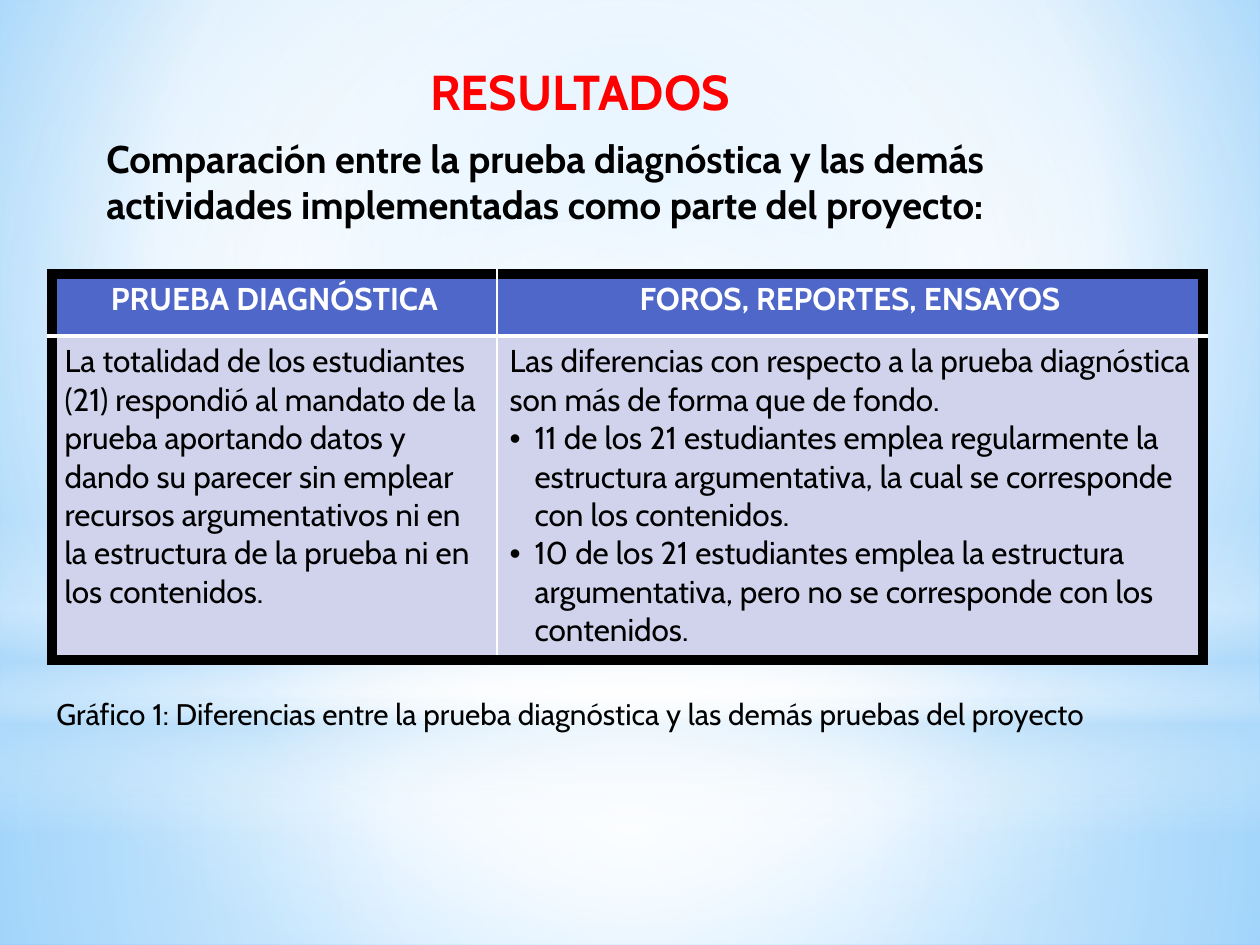
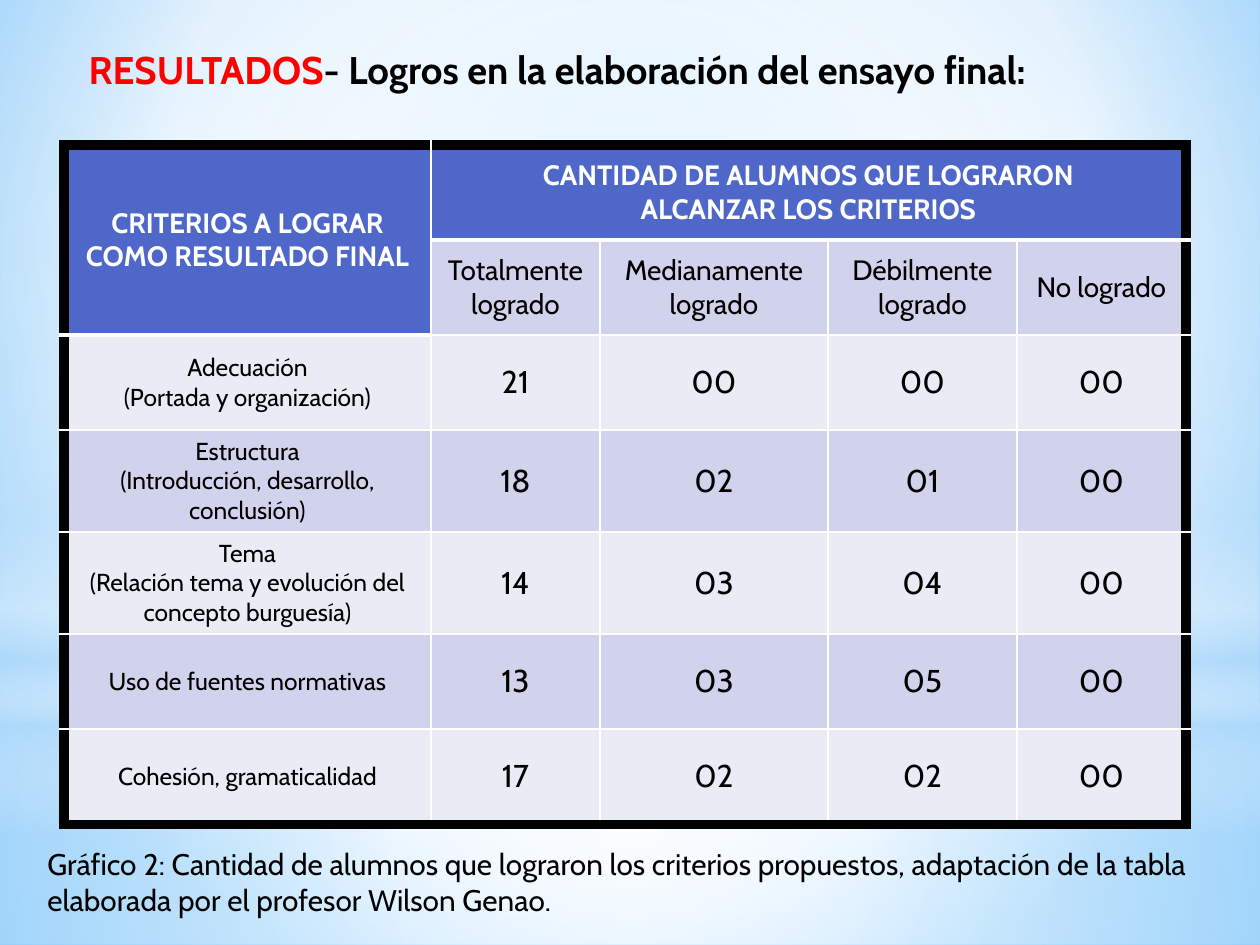
from dataclasses import dataclass

from pptx import Presentation
from pptx import util as u
from pptx.dml.color import RGBColor
from pptx.enum import shapes, text
from pptx.oxml import parse_xml
from pptx.oxml.ns import nsdecls, qn

FONT = "Cabin"
BLACK, WHITE, RED = "000000", "FFFFFF", "FF0000"
HEADER, BAND_DARK, BAND_LIGHT = "4E67C8", "D0D3EB", "E9EBF5"
SKY = "B4DCFA"
LEFT, CENTER = text.PP_ALIGN.LEFT, text.PP_ALIGN.CENTER
TOP, MIDDLE = text.MSO_ANCHOR.TOP, text.MSO_ANCHOR.MIDDLE
CENTRE_FOCUS = (50, 50, 50, 50)


@dataclass(frozen=True)
class Style:
    size: int
    colour: str = BLACK
    bold: bool = False


HEADING = Style(28, RED, True)
SUBHEADING = Style(22, BLACK, True)
SUBHEADING_RED = Style(22, RED, True)
CAPTION = Style(17)


def px(length):
    return u.Emu(round(length * 914400 / 126))


def rgb(colour):
    return RGBColor.from_string(colour)


def write(frame, paragraphs, align=LEFT):
    """Fill a text frame; each paragraph is a list of (words, style)."""
    for index, spans in enumerate(paragraphs):
        para = frame.paragraphs[0] if index == 0 else frame.add_paragraph()
        para.alignment = align
        for words, style in spans:
            span = para.add_run()
            span.text = words
            span.font.name = FONT
            span.font.size = u.Pt(style.size)
            span.font.bold = style.bold
            span.font.color.rgb = rgb(style.colour)


def place(shape, box):
    shape.left, shape.top, shape.width, shape.height = map(px, box)


def add_title(page, box, spans, align=LEFT):
    title = page.shapes.title
    place(title, box)
    frame = title.text_frame
    frame.word_wrap = True
    frame.auto_size = text.MSO_AUTO_SIZE.NONE
    frame.vertical_anchor = TOP
    write(frame, [spans], align)


def add_text(page, box, words, style):
    frame = page.shapes.add_textbox(*map(px, box)).text_frame
    frame.word_wrap = True
    write(frame, [[(words, style)]])


def gradient(stops, focus=None):
    """Gradient of (position, colour, opacity): circular with a focus, else downward."""
    marks = "".join(
        f'<a:gs pos="{position * 1000}"><a:srgbClr val="{colour}">'
        f'<a:alpha val="{opacity * 1000}"/></a:srgbClr></a:gs>'
        for position, colour, opacity in stops)
    if focus:
        sides = " ".join(f'{side}="{share * 1000}"' for side, share in zip("ltrb", focus))
        course = f'<a:path path="circle"><a:fillToRect {sides}/></a:path>'
    else:
        course = '<a:lin ang="5400000" scaled="0"/>'
    return parse_xml(f'<a:gradFill {nsdecls("a")} rotWithShape="1">'
                     f'<a:gsLst>{marks}</a:gsLst>{course}</a:gradFill>')


def paint(owner, fill, stops, focus=None):
    fill.background()
    blank = next(owner.iter(qn("a:noFill")))
    blank.getparent().replace(blank, gradient(stops, focus))


def build_backdrop(master, page):
    """Give the master its sky; shapes are drawn on the page and moved over."""
    paint(master.element, master.background.fill,
          [(0, "9ED5FF", 100), (60, WHITE, 100), (100, "5BB9FF", 100)], (20, 10, 20, 60))
    rectangle, oval = shapes.MSO_SHAPE.RECTANGLE, shapes.MSO_SHAPE.OVAL
    layers = [
        (rectangle, (0, 703, 1260, 242),
         [(0, WHITE, 91), (37, WHITE, 76), (100, SKY, 79)], CENTRE_FOCUS),
        (rectangle, (0, 0, 1260, 703),
         [(0, WHITE, 89), (48, WHITE, 62), (100, SKY, 79)], CENTRE_FOCUS),
        (rectangle, (0, 519, 1260, 315),
         [(0, WHITE, 0), (29, WHITE, 30), (45, SKY, 40),
          (55, WHITE, 26), (65, SKY, 60), (100, WHITE, 0)], None),
        (oval, (0, 220, 1260, 703),
         [(0, WHITE, 100), (56, WHITE, 0)], CENTRE_FOCUS),
    ]
    for depth, (kind, box, stops, focus) in enumerate(layers):
        layer = page.shapes.add_shape(kind, *map(px, box))
        layer.shadow.inherit = False
        paint(layer.element, layer.fill, stops, focus)
        layer.line.fill.background()
        master.shapes.element.insert(2 + depth, layer.element)


def set_borders(cell, borders):
    """Draw (side, colour, points) lines, given in the order L, R, T, B."""
    properties = cell._tc.get_or_add_tcPr()
    for index, (side, colour, points) in enumerate(borders):
        properties.insert(index, parse_xml(
            f'<a:ln{side} {nsdecls("a")} w="{u.Pt(points)}" cmpd="sng">'
            f'<a:solidFill><a:srgbClr val="{colour}"/></a:solidFill>'
            f'<a:prstDash val="solid"/></a:ln{side}>'))


def add_grid(page, corner, widths, heights):
    box = (*corner, sum(widths), sum(heights))
    table = page.shapes.add_table(len(heights), len(widths), *map(px, box)).table
    table.horz_banding = False
    for column, width in zip(table.columns, widths):
        column.width = px(width)
    for row, height in zip(table.rows, heights):
        row.height = px(height)
    return table


def dress_grid(table, fill_at, anchor):
    """Fill cells, with a black frame, white inner lines and a thick header rule."""
    row_count, column_count = len(table.rows), len(table.columns)
    outer, inner, rule = (BLACK, 6), (WHITE, 1), (WHITE, 3)
    for row in range(row_count):
        for column in range(column_count):
            cell = table.cell(row, column)
            colour = fill_at(row, column)
            cell.fill.solid()
            cell.fill.fore_color.rgb = rgb(colour)
            cell.vertical_anchor = anchor
            last_column = column + (cell.span_width if cell.is_merge_origin else 1)
            below = rule if colour == HEADER else inner
            set_borders(cell, [
                ("L", *(outer if column == 0 else inner)),
                ("R", *(outer if last_column == column_count else inner)),
                ("T", *(outer if row == 0 else inner)),
                ("B", *(outer if row == row_count - 1 else below))])


def add_bullet(para):
    properties = para._p.get_or_add_pPr()
    indent = px(25)
    properties.set("marL", str(indent))
    properties.set("indent", str(-indent))
    properties.append(parse_xml(f'<a:buFont {nsdecls("a")} typeface="Arial"/>'))
    properties.append(parse_xml(f'<a:buChar {nsdecls("a")} char="•"/>'))


def comparison_table(page, corner):
    table = add_grid(page, corner, (445, 706), (62, 324))
    dress_grid(table, lambda row, column: BAND_DARK if row else HEADER, TOP)
    columns = [
        ("PRUEBA DIAGNÓSTICA",
         ["La totalidad de los estudiantes (21) respondió al mandato de la prueba "
          "aportando datos y dando su parecer sin emplear recursos argumentativos ni "
          "en la estructura de la prueba ni en los contenidos."]),
        ("FOROS, REPORTES, ENSAYOS",
         ["Las diferencias con respecto a la prueba diagnóstica son más de forma que "
          "de fondo.",
          "11 de los 21 estudiantes emplea regularmente la estructura argumentativa, "
          "la cual se corresponde con los contenidos.",
          "10 de los 21 estudiantes emplea la estructura argumentativa, pero no se "
          "corresponde con los contenidos."]),
    ]
    for column, (header, findings) in enumerate(columns):
        write(table.cell(0, column).text_frame,
              [[(header, Style(18, WHITE, True))]], CENTER)
        body = table.cell(1, column).text_frame
        write(body, [[(finding, Style(18))] for finding in findings])
        for para in body.paragraphs[1:]:
            add_bullet(para)


def achievement_table(page, corner):
    table = add_grid(page, corner, (367, 169, 228, 189, 169), [95] * 7)
    table.cell(0, 0).merge(table.cell(1, 0))
    table.cell(0, 1).merge(table.cell(0, 4))

    def fill_at(row, column):
        if row == 0 or (row == 1 and column == 0):
            return HEADER
        return BAND_DARK if row % 2 else BAND_LIGHT

    dress_grid(table, fill_at, MIDDLE)

    def put(row, column, lines, style):
        write(table.cell(row, column).text_frame,
              [[(line, style)] for line in lines], CENTER)

    header = Style(16, WHITE, True)
    put(0, 0, ["CRITERIOS A LOGRAR COMO RESULTADO FINAL"], header)
    put(0, 1, ["CANTIDAD DE ALUMNOS QUE LOGRARON", "ALCANZAR LOS CRITERIOS"], header)
    levels = ["Totalmente logrado", "Medianamente logrado", "Débilmente logrado",
              "No logrado"]
    for column, level in enumerate(levels, 1):
        put(1, column, [level], Style(16))
    criteria = [
        (["Adecuación", "(Portada y organización)"], (21, 0, 0, 0)),
        (["Estructura", "(Introducción, desarrollo, conclusión)"], (18, 2, 1, 0)),
        (["Tema", "(Relación tema y evolución del concepto burguesía)"], (14, 3, 4, 0)),
        (["Uso de fuentes normativas"], (13, 3, 5, 0)),
        (["Cohesión, gramaticalidad"], (17, 2, 2, 0)),
    ]
    for row, (lines, counts) in enumerate(criteria, 2):
        put(row, 0, lines, Style(14))
        for column, count in enumerate(counts, 1):
            put(row, column, [f"{count:02}"], Style(18))


def comparison_page(page):
    add_title(page, (362, 55, 436, 72), [("RESULTADOS", HEADING)], CENTER)
    add_text(page, (94, 129, 1071, 106),
             "Comparación entre la prueba diagnóstica y las demás actividades "
             "implementadas como parte del proyecto:", SUBHEADING)
    comparison_table(page, (52, 274))
    add_text(page, (44, 690, 1171, 49),
             "Gráfico 1: Diferencias entre la prueba diagnóstica y las demás pruebas "
             "del proyecto", CAPTION)


def achievement_page(page):
    add_title(page, (76, 40, 1081, 59),
              [("RESULTADOS", SUBHEADING_RED),
               ("- Logros en la elaboración del ensayo final:", SUBHEADING)])
    achievement_table(page, (64, 145))
    add_text(page, (35, 840, 1171, 84),
             "Gráfico 2: Cantidad de alumnos que lograron los criterios propuestos, "
             "adaptación de la tabla elaborada por el profesor Wilson Genao.", CAPTION)


def main():
    deck = Presentation()
    deck.slide_width, deck.slide_height = px(1260), px(945)
    title_only = deck.slide_layouts[5]
    pages = [deck.slides.add_slide(title_only) for _ in range(2)]
    build_backdrop(deck.slide_master, pages[0])
    comparison_page(pages[0])
    achievement_page(pages[1])
    deck.save("out.pptx")


if __name__ == "__main__":
    main()
